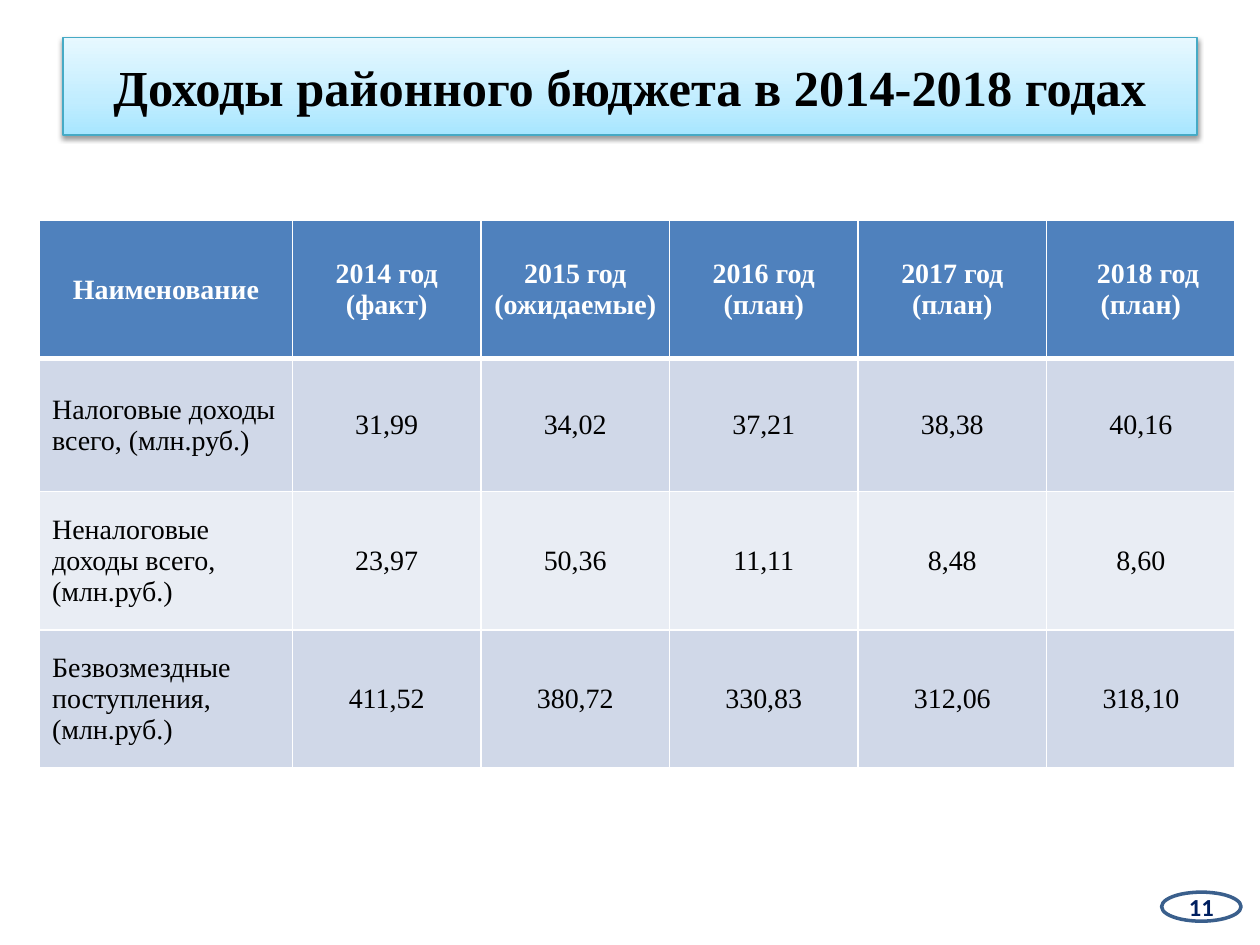
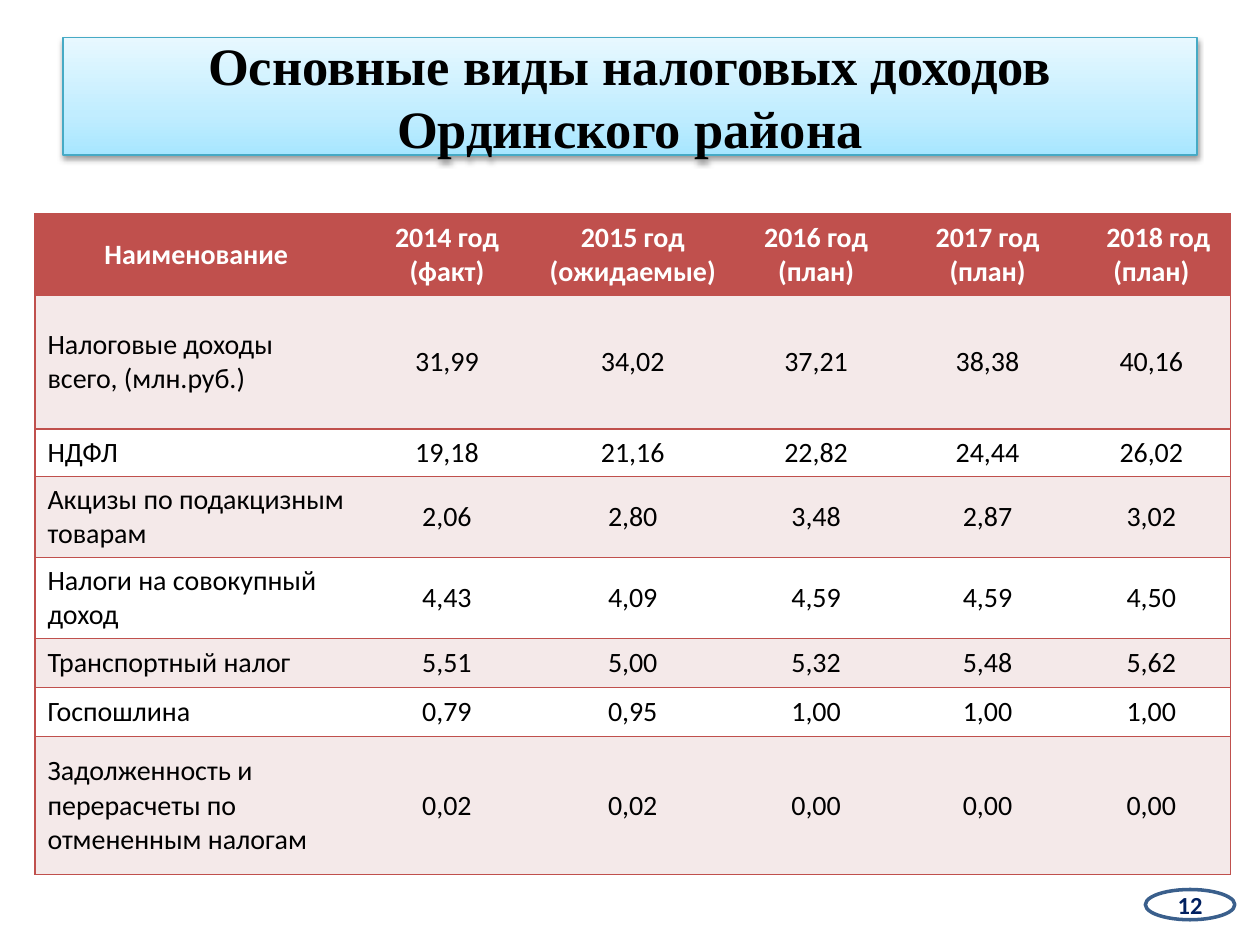
from collections import namedtuple
from dataclasses import dataclass

from lxml.etree import SubElement
from pptx import Presentation
from pptx.dml.color import RGBColor
from pptx.enum.shapes import MSO_SHAPE
from pptx.enum.text import MSO_ANCHOR, MSO_AUTO_SIZE, PP_ALIGN
from pptx.oxml import parse_xml
from pptx.oxml.ns import nsdecls, qn
from pptx.util import Pt

Box = namedtuple("Box", "left top width height")
TITLE_ONLY = 5


@dataclass(frozen=True)
class Theme:
    serif: str = "Times New Roman"
    sans: str = "Calibri"
    white: str = "FFFFFF"
    black: str = "000000"
    band_stops: tuple = ((0, "A7E6FF"), (35, "C1EDFF"), (100, "E7F8FF"))
    band_line: str = "46AAC5"
    badge_line: str = "3A5F8C"
    badge_text: str = "002060"
    table_size: float = 16
    badge_size: float = 14
    plain_table_style: str = "{2D5ABB26-0587-4C30-8999-92F81FD0307C}"


@dataclass(frozen=True)
class TableLook:
    font: str
    header: str
    bands: tuple
    border: str
    header_rule: float
    inner_verticals: bool


THEME = Theme()
BLUE_LOOK = TableLook(THEME.serif, "4F81BD", ("D0D8E8", "E9EDF4"), THEME.white, 3, True)
RED_LOOK = TableLook(THEME.sans, "C0504D", ("F4E9E9", THEME.white), "C0504D", 1, False)

HEADINGS = ["Наименование", "2014 год (факт)", "2015 год (ожидаемые)",
            "2016 год (план)", "2017 год (план)", "2018 год (план)"]
TAX_TOTAL = ["Налоговые доходы всего, (млн.руб.)", "31,99", "34,02", "37,21", "38,38", "40,16"]

INCOME_ROWS = [
    HEADINGS,
    TAX_TOTAL,
    ["Неналоговые доходы всего, (млн.руб.)", "23,97", "50,36", "11,11", "8,48", "8,60"],
    ["Безвозмездные поступления, (млн.руб.)", "411,52", "380,72", "330,83", "312,06", "318,10"],
]
TAX_ROWS = [
    HEADINGS,
    TAX_TOTAL,
    ["НДФЛ", "19,18", "21,16", "22,82", "24,44", "26,02"],
    ["Акцизы по подакцизным товарам", "2,06", "2,80", "3,48", "2,87", "3,02"],
    ["Налоги на совокупный доход", "4,43", "4,09", "4,59", "4,59", "4,50"],
    ["Транспортный налог", "5,51", "5,00", "5,32", "5,48", "5,62"],
    ["Госпошлина", "0,79", "0,95", "1,00", "1,00", "1,00"],
    ["Задолженность и перерасчеты по отмененным налогам",
     "0,02", "0,02", "0,00", "0,00", "0,00"],
]


def place(shape, box):
    shape.left, shape.top, shape.width, shape.height = (Pt(length) for length in box)


def write(text_frame, text, font, size, color, bold, alignment=PP_ALIGN.CENTER):
    text_frame.text = text
    paragraph = text_frame.paragraphs[0]
    paragraph.alignment = alignment
    for run in paragraph.runs:
        run.font.name, run.font.size, run.font.bold = font, Pt(size), bold
        run.font.color.rgb = RGBColor.from_string(color)
    return paragraph


# Title band: gradient, thin outline and soft shadow
def add_title_band(slide, box, text, size):
    title = slide.shapes.title
    place(title, box)
    write(title.text_frame, text, THEME.serif, size, THEME.black, True)
    title.text_frame.auto_size = MSO_AUTO_SIZE.NONE
    title.text_frame.vertical_anchor = MSO_ANCHOR.MIDDLE
    stops = "".join(f'<a:gs pos="{position * 1000}"><a:srgbClr val="{color}"/></a:gs>'
                    for position, color in THEME.band_stops)
    properties = title.element.spPr
    properties.append(parse_xml(
        f'<a:gradFill {nsdecls("a")} rotWithShape="1"><a:gsLst>{stops}</a:gsLst>'
        f'<a:lin ang="{270 * 60000}" scaled="0"/></a:gradFill>'))
    title.line.color.rgb = RGBColor.from_string(THEME.band_line)
    title.line.width = Pt(0.75)
    properties.append(parse_xml(
        f'<a:effectLst {nsdecls("a")}><a:outerShdw blurRad="{Pt(3.1)}" dist="{Pt(1.6)}" '
        f'dir="{90 * 60000}" rotWithShape="0"><a:srgbClr val="{THEME.black}">'
        f'<a:alpha val="38000"/></a:srgbClr></a:outerShdw></a:effectLst>'))


# Page number in an oval
def add_page_badge(slide, box, number):
    badge = slide.shapes.add_shape(MSO_SHAPE.OVAL, *(Pt(length) for length in box))
    badge.shadow.inherit = False
    badge.fill.solid()
    badge.fill.fore_color.rgb = RGBColor.from_string(THEME.white)
    badge.line.color.rgb = RGBColor.from_string(THEME.badge_line)
    badge.line.width = Pt(2)
    text_frame = badge.text_frame
    text_frame.margin_top = text_frame.margin_bottom = 0
    text_frame.margin_left = text_frame.margin_right = 0
    text_frame.vertical_anchor = MSO_ANCHOR.MIDDLE
    write(text_frame, str(number), THEME.sans, THEME.badge_size, THEME.badge_text, True)


def set_borders(cell, color, widths):
    """Draw the given sides; widths maps L, R, T, B (in this order) to points."""
    properties = cell._tc.get_or_add_tcPr()
    for side, width in widths.items():
        line = SubElement(properties, qn(f"a:ln{side}"), w=str(Pt(width)))
        SubElement(SubElement(line, qn("a:solidFill")), qn("a:srgbClr"), val=color)


def cell_borders(look, row, column, last_column):
    widths = {}
    if look.inner_verticals or column == 0:
        widths["L"] = 1
    if look.inner_verticals or column == last_column:
        widths["R"] = 1
    widths["T"] = look.header_rule if row == 1 else 1
    widths["B"] = look.header_rule if row == 0 else 1
    return widths


# Budget table: coloured heading row, banded body
def add_budget_table(slide, box, rows, column_widths, row_heights, look):
    frame = slide.shapes.add_table(len(rows), len(column_widths),
                                   *(Pt(length) for length in box))
    table = frame.table
    table._tbl.tblPr.find(qn("a:tableStyleId")).text = THEME.plain_table_style
    for column, width in zip(table.columns, column_widths):
        column.width = Pt(width)
    for table_row, height in zip(table.rows, row_heights):
        table_row.height = Pt(height)

    last_column = len(column_widths) - 1
    for row, values in enumerate(rows):
        is_heading = row == 0
        for column, value in enumerate(values):
            cell = table.cell(row, column)
            set_borders(cell, look.border, cell_borders(look, row, column, last_column))
            cell.fill.solid()
            fill = look.header if is_heading else look.bands[(row - 1) % 2]
            cell.fill.fore_color.rgb = RGBColor.from_string(fill)
            cell.vertical_anchor = MSO_ANCHOR.MIDDLE
            is_label = column == 0 and not is_heading
            paragraph = write(cell.text_frame, value, look.font, THEME.table_size,
                              THEME.white if is_heading else THEME.black, is_heading,
                              PP_ALIGN.LEFT if is_label else PP_ALIGN.CENTER)
            # The last heading starts slightly to the right
            if is_heading and column == last_column:
                paragraph._p.get_or_add_pPr().set("indent", str(Pt(8)))


def add_budget_slide(presentation, title, title_size, title_height, number, badge_box,
                     table_origin, rows, column_widths, row_heights, look):
    slide = presentation.slides.add_slide(presentation.slide_layouts[TITLE_ONLY])
    add_title_band(slide, Box(36, 21.6, 648, title_height), title, title_size)
    table_box = Box(*table_origin, sum(column_widths), sum(row_heights))
    add_budget_table(slide, table_box, rows, column_widths, row_heights, look)
    add_page_badge(slide, badge_box, number)


def main():
    presentation = Presentation()
    presentation.slide_width, presentation.slide_height = Pt(720), Pt(540)
    add_budget_slide(
        presentation, "Доходы районного бюджета в 2014-2018 годах", 28.8, 55.5,
        11, Box(663.8, 509.8, 45.4, 16.6), (22.6, 126), INCOME_ROWS,
        [144.5] + [107.75] * 5, [79, 76, 79, 79], BLUE_LOOK)
    add_budget_slide(
        presentation, "Основные виды налоговых доходов Ординского района", 30, 67,
        12, Box(654.5, 508.3, 51.1, 17.3), (20, 122.4), TAX_ROWS,
        [184.3, 102.2, 110.2, 99.4, 96.5, 90.7],
        [46, 76.5, 27, 46, 46, 28, 28, 79], RED_LOOK)
    presentation.save("out.pptx")


if __name__ == "__main__":
    main()
